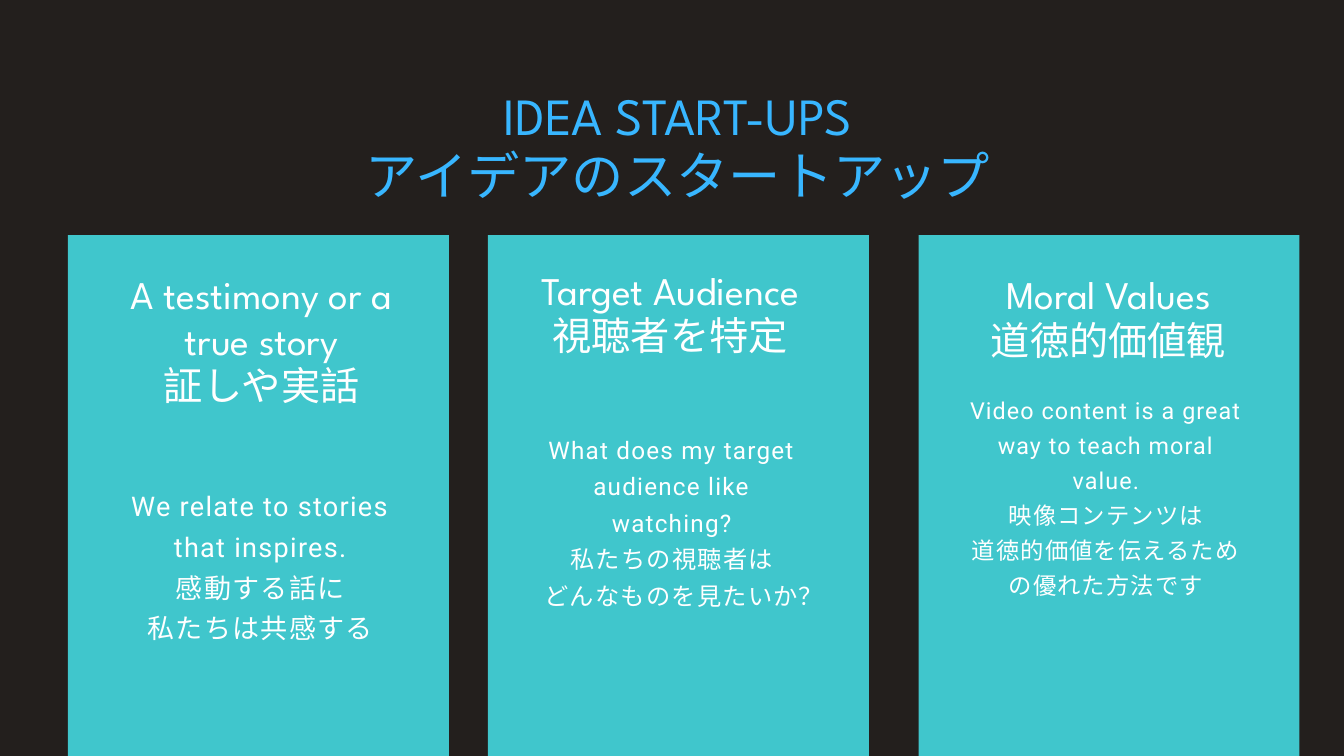
from pptx import Presentation
from pptx import util as u
from pptx.dml.color import RGBColor
from pptx.enum import shapes, text

HUES = {"back": "231F1D", "title": "38B6FF", "card": "40C6CC", "text": "FFFFFF"}
HEAD, BODY = "League Spartan", "Roboto"


def place(box, left, top, width, height):
    box.left, box.top = u.Cm(left), u.Cm(top)
    box.width, box.height = u.Cm(width), u.Cm(height)


def write(box, lines, font, size, lead, hue, gap=0):
    """Fill a box with centred lines; lead is a multiple of size, gap is letter spacing in points."""
    frame = box.text_frame
    frame.word_wrap = True
    frame.auto_size = text.MSO_AUTO_SIZE.SHAPE_TO_FIT_TEXT
    frame.vertical_anchor = text.MSO_ANCHOR.TOP
    frame.margin_left = frame.margin_right = frame.margin_top = frame.margin_bottom = 0
    for i, line in enumerate(lines):
        para = frame.add_paragraph() if i else frame.paragraphs[0]
        para.alignment = text.PP_ALIGN.CENTER
        para.line_spacing = u.Pt(size * lead)
        para.space_before = u.Pt(0)
        run = para.add_run()
        run.text = line
        run.font.name = font
        run.font.size = u.Pt(size)
        run.font.color.rgb = RGBColor.from_string(HUES[hue])
        if gap:
            run._r.get_or_add_rPr().set("spc", str(round(gap * 100)))


deck = Presentation()
deck.slide_width, deck.slide_height = u.Cm(50.8), u.Cm(28.58)
slide = deck.slides.add_slide(deck.slide_layouts[5])
slide.background.fill.solid()
slide.background.fill.fore_color.rgb = RGBColor.from_string(HUES["back"])

title = slide.shapes.title
place(title, 4.95, 3.25, 41.35, 4.6)
write(title, ["IDEA START-UPS", "アイデアのスタートアップ"], HEAD, 56, 1.15, "title")

# card left, heading (left, top, height, lines), body (left, top, height, size, gap, lines)
cards = [
    (2.57,
     (4.52, 10.31, 6.86, ["A testimony or a true story", "証しや実話"]),
     (4.57, 18.21, 5.94, 29, 1.4,
      ["We relate to stories that inspires.", "感動する話に", "私たちは共感する"])),
    (18.44,
     (19.96, 10.13, 5.16, ["Target Audience", "視聴者を特定"]),
     (20.12, 16.18, 6.78, 26, 1.3,
      ["What does my target audience like watching?", "私たちの視聴者は",
       "どんなものを見たいか？"])),
    (34.72,
     (36.53, 10.31, 3.43, ["Moral Values", "道徳的価値観"]),
     (36.53, 14.73, 7.75, 25, 1.2,
      ["Video content is a great way to teach moral value.", "映像コンテンツは",
       "道徳的価値を伝えるための優れた方法です"])),
]

for left, head, body in cards:
    card = slide.shapes.add_shape(
        shapes.MSO_SHAPE.RECTANGLE, u.Cm(left), u.Cm(8.89), u.Cm(14.4), u.Cm(19.69))
    card.shadow.inherit = False
    card.fill.solid()
    card.fill.fore_color.rgb = RGBColor.from_string(HUES["card"])
    card.line.fill.background()

    x, y, tall, lines = head
    box = slide.shapes.add_textbox(0, 0, 0, 0)
    place(box, x, y, 10.74, tall)
    write(box, lines, HEAD, 42, 1.15, "text")

    x, y, tall, size, gap, lines = body
    box = slide.shapes.add_textbox(0, 0, 0, 0)
    place(box, x, y, 10.54, tall)
    write(box, lines, BODY, size, 1.5, "text", gap)

deck.save("out.pptx")
